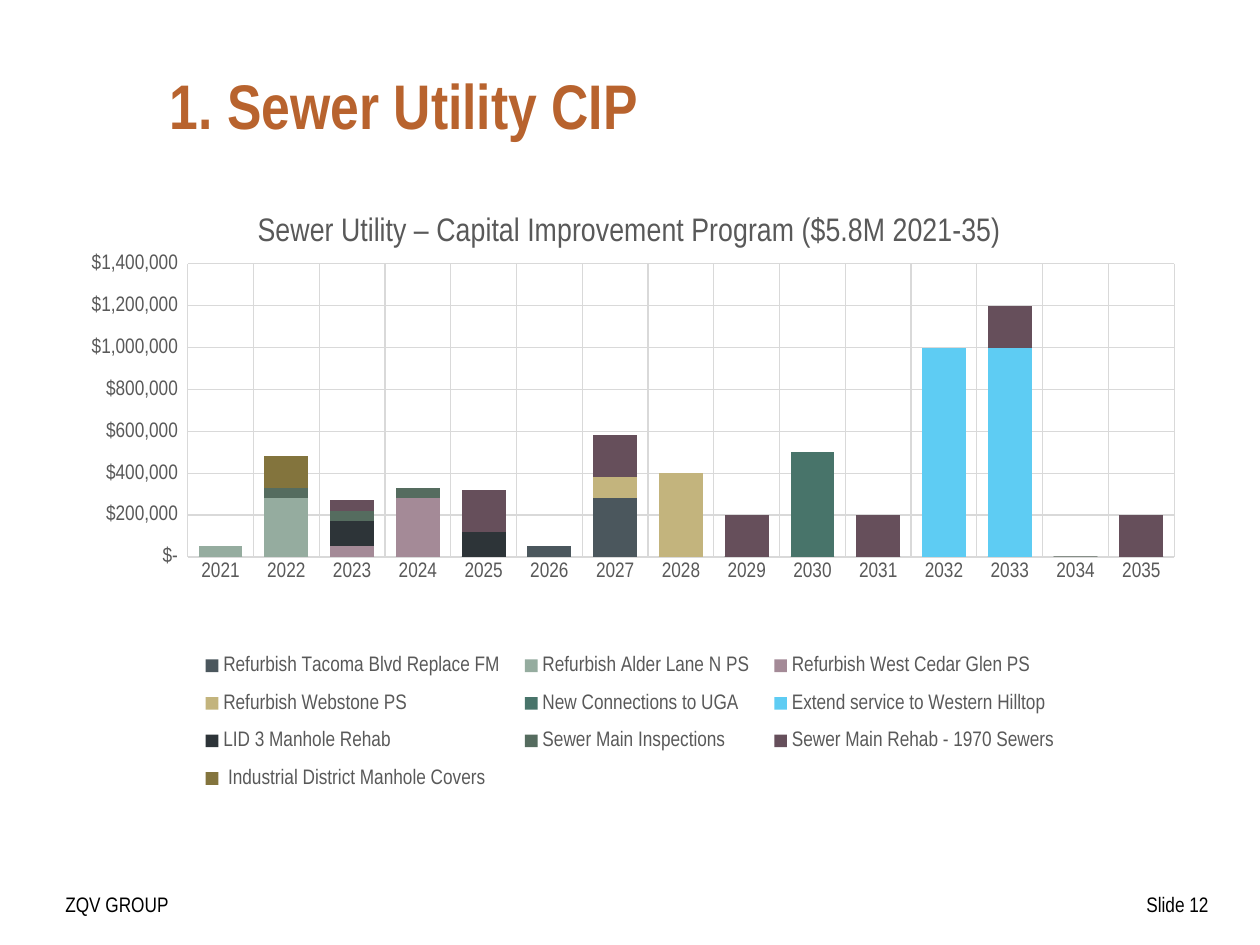
from lxml import etree
from pptx import Presentation
from pptx.chart.data import CategoryChartData
from pptx.dml.color import RGBColor
from pptx.enum.chart import XL_CHART_TYPE, XL_LEGEND_POSITION, XL_TICK_MARK
from pptx.enum.text import MSO_ANCHOR, PP_ALIGN
from pptx.oxml.ns import qn
from pptx.util import Inches, Pt

STACKED = XL_CHART_TYPE.COLUMN_STACKED
LEGEND_BOTTOM = XL_LEGEND_POSITION.BOTTOM
NO_TICK = XL_TICK_MARK.NONE
MIDDLE, TOP = MSO_ANCHOR.MIDDLE, MSO_ANCHOR.TOP
LEFT, RIGHT = PP_ALIGN.LEFT, PP_ALIGN.RIGHT

FONT = "Arial Narrow"
COLORS = {"title": "B8632E", "footer": "000000", "label": "595959", "grid": "D9D9D9"}
DOLLARS = r'_("$"* #,##0_);_("$"* \(#,##0\);_("$"* "-"_);_(@_)'
YEARS = range(2021, 2036)

# Project name, colour, and spending in the years that have any
PROJECTS = [
    ("Refurbish Tacoma Blvd Replace FM", "4B575D", {2026: 50000, 2027: 280000}),
    ("Refurbish Alder Lane N PS", "95AC9F", {2021: 50000, 2022: 280000}),
    ("Refurbish West Cedar Glen PS", "A48A97", {2023: 50000, 2024: 280000}),
    ("Refurbish Webstone PS", "C3B47D", {2027: 100000, 2028: 400000}),
    ("New Connections to UGA", "48746A", {2030: 500000}),
    ("Extend service to Western Hilltop", "5ECCF3", {2032: 1000000, 2033: 1000000}),
    ("LID 3 Manhole Rehab", "2D3438", {2023: 120000, 2025: 120000}),
    ("Sewer Main Inspections", "556C5F", dict.fromkeys((2022, 2023, 2024), 50000)),
    ("Sewer Main Rehab - 1970 Sewers", "664F5B",
     {2023: 50000, **dict.fromkeys(range(2025, 2036, 2), 200000)}),
    (" Industrial District Manhole Covers ", "83743D", {2022: 150000}),
]


def style_font(font, size, color, bold=False):
    font.name, font.size, font.bold = FONT, Pt(size), bold
    font.color.rgb = RGBColor.from_string(COLORS[color])


def add_text(slide, text, box, size, color, align=LEFT, anchor=TOP, bold=False):
    frame = slide.shapes.add_textbox(*map(Inches, box)).text_frame
    frame.word_wrap = True
    frame.vertical_anchor = anchor
    paragraph = frame.paragraphs[0]
    paragraph.text = text
    paragraph.alignment = align
    style_font(paragraph.font, size, color, bold)


def set_layout(element, x, y, w, h, inner=False):
    """Place a chart part by fractions of the chart's size."""
    for old in element.findall(qn("c:layout")):
        element.remove(old)
    layout = etree.Element(qn("c:layout"))
    manual = etree.SubElement(layout, qn("c:manualLayout"))
    settings = [("layoutTarget", "inner")] if inner else []
    settings += [("xMode", "edge"), ("yMode", "edge"),
                 ("x", x), ("y", y), ("w", w), ("h", h)]
    for tag, value in settings:
        etree.SubElement(manual, qn(f"c:{tag}")).set("val", str(value))
    position = element.find(qn("c:legendPos"))
    if position is None:
        element.insert(0, layout)
    else:
        position.addnext(layout)


def style_axis(axis):
    axis.major_tick_mark = axis.minor_tick_mark = NO_TICK
    axis.has_major_gridlines = True
    style_font(axis.tick_labels.font, 12, "label")
    for line in (axis.major_gridlines.format.line, axis.format.line):
        line.color.rgb = RGBColor.from_string(COLORS["grid"])
        line.width = Pt(0.75)


def add_program_chart(slide, box):
    data = CategoryChartData(number_format=DOLLARS)
    data.categories = [str(year) for year in YEARS]
    for name, _, spending in PROJECTS:
        data.add_series(name, [spending.get(year, 0) for year in YEARS])
    chart = slide.shapes.add_chart(STACKED, *map(Inches, box), data).chart
    style_font(chart.font, 10, "footer")

    # Title
    chart.has_title = True
    heading = chart.chart_title.text_frame.paragraphs[0]
    heading.text = "Sewer Utility – Capital Improvement Program ($5.8M 2021-35)"
    style_font(heading.font, 18.6, "label")
    chart.chart_title.include_in_layout = False

    # Columns
    plot = chart.plots[0]
    plot.gap_width, plot.overlap, plot.vary_by_categories = 50, 100, False
    for series, (_, color, _) in zip(plot.series, PROJECTS):
        series.format.fill.solid()
        series.format.fill.fore_color.rgb = RGBColor.from_string(color)

    # Axes
    style_axis(chart.category_axis)
    style_axis(chart.value_axis)
    chart.value_axis.format.line.fill.background()
    chart.value_axis.maximum_scale = 1400000
    chart.value_axis.major_unit = 200000
    chart.value_axis.tick_labels.number_format = DOLLARS
    chart.value_axis.tick_labels.number_format_is_linked = False

    # Legend and plot area
    chart.has_legend = True
    chart.legend.position = LEGEND_BOTTOM
    chart.legend.include_in_layout = False
    style_font(chart.legend.font, 12, "label")
    legend, = chart.element.iter(qn("c:legend"))
    plot_area, = chart.element.iter(qn("c:plotArea"))
    set_layout(legend, 0.11, 0.72, 0.78, 0.27)
    set_layout(plot_area, 0.11, 0.12, 0.87, 0.47, inner=True)


def main():
    prs = Presentation()
    prs.slide_width, prs.slide_height = Inches(10), Inches(7.5)
    slide = prs.slides.add_slide(prs.slide_layouts[6])

    # Footer
    add_text(slide, "Slide 12", (8.87, 7.03, 0.82, 0.3), 12, "footer", align=RIGHT)
    add_text(slide, "ZQV GROUP", (0.42, 7.03, 1.42, 0.3), 12, "footer")

    # Heading and chart
    add_text(slide, "1. Sewer Utility CIP", (1.25, 0.33, 8.25, 1), 36, "title",
             anchor=MIDDLE, bold=True)
    add_program_chart(slide, (0.5, 1.5, 9, 4.95))

    prs.save("out.pptx")


if __name__ == "__main__":
    main()
